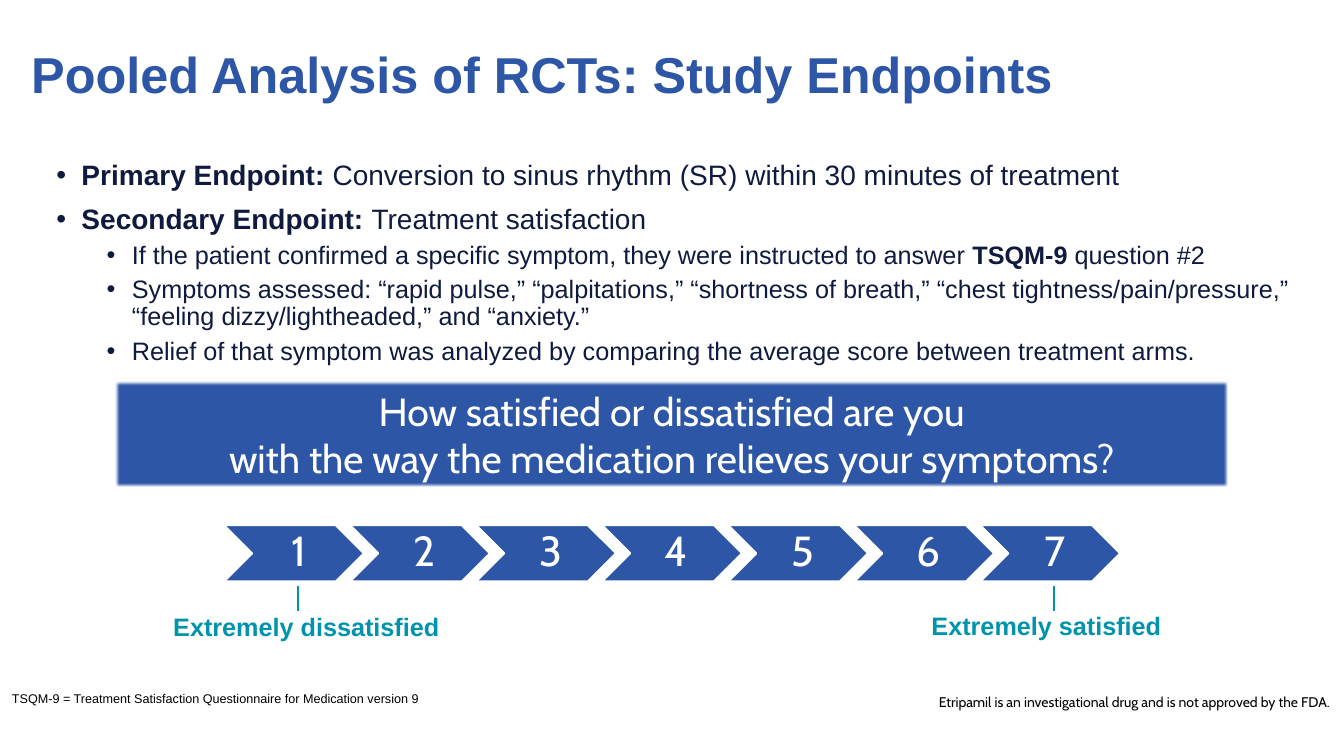
from dataclasses import dataclass
from typing import Any

from lxml.etree import SubElement
from pptx import Presentation
from pptx.dml.color import RGBColor
from pptx.enum.shapes import MSO_CONNECTOR, MSO_SHAPE
from pptx.enum.text import MSO_ANCHOR, PP_ALIGN
from pptx.oxml.ns import qn
from pptx.util import Inches, Pt

BLUE = RGBColor(0x2D, 0x56, 0xA6)
NAVY = RGBColor(0x0F, 0x1A, 0x3E)
TEAL = RGBColor(0x00, 0x93, 0xAC)
WHITE = RGBColor(0xFF, 0xFF, 0xFF)
BLACK = RGBColor(0x00, 0x00, 0x00)

TITLE_FONT = {"name": "Arial", "size": Pt(36), "bold": True}
QUESTION_FONT = {"name": "Cabin", "size": Pt(28), "bold": False}
SCORE_FONT = {"name": "Cabin", "size": Pt(30), "bold": False}
ANCHOR_FONT = {"name": "Arial", "size": Pt(18), "bold": True}
NOTE_FONT = {"name": "Arial", "size": Pt(9), "bold": False}
DISCLAIMER_FONT = {"name": "Cabin", "size": Pt(10), "bold": False}
SCORE_FRAME = {
    "vertical_anchor": MSO_ANCHOR.MIDDLE,
    "word_wrap": True,
    "margin_left": Inches(0.13),
    "margin_right": Inches(0.04),
    "margin_top": Inches(0.04),
    "margin_bottom": Inches(0.04),
}


@dataclass(frozen=True)
class Endpoint:
    """A bullet whose phrases alternate between plain and bold, plain first."""
    level: int
    phrases: tuple[str, ...]


@dataclass(frozen=True)
class ScaleEnd:
    caption: str
    left: float
    top: float
    width: float
    tick: float


@dataclass(frozen=True)
class LevelStyle:
    indent: float
    size: int
    space_before: int


LEVELS = (LevelStyle(0.25, 20, 10), LevelStyle(0.75, 18, 5))
ENDPOINTS = (
    Endpoint(0, ("", "Primary Endpoint: ",
                 "Conversion to sinus rhythm (SR) within 30 minutes of treatment")),
    Endpoint(0, ("", "Secondary Endpoint: ", "Treatment satisfaction")),
    Endpoint(1, ("If the patient confirmed a specific symptom, they were instructed to answer ",
                 "TSQM-9", " question #2")),
    Endpoint(1, ("Symptoms assessed: “rapid pulse,” “palpitations,” “shortness of breath,” "
                 "“chest tightness/pain/pressure,” “feeling dizzy/lightheaded,” and “anxiety.”",)),
    Endpoint(1, ("Relief of that symptom was analyzed by comparing the average score "
                 "between treatment arms.",)),
)
SCALE_ENDS = (
    ScaleEnd("Extremely dissatisfied", 1.62, 6.02, 3.06, 2.96),
    ScaleEnd("Extremely satisfied", 9.14, 6.01, 2.68, 10.45),
)
SCORES = range(1, 8)
SCORE_LEFT, SCORE_TOP, SCORE_PITCH = 2.22, 5.21, 1.25


def apply(target: Any, formats: dict[str, Any]) -> None:
    for attribute, value in formats.items():
        setattr(target, attribute, value)


def write(paragraph: Any, wording: str, font: dict[str, Any], color: RGBColor,
          align: PP_ALIGN = PP_ALIGN.LEFT) -> None:
    run = paragraph.add_run()
    run.text = wording
    paragraph.alignment = align
    apply(run.font, font)
    run.font.color.rgb = color


def add_text_frame(slide: Any, left: float, top: float, width: float, height: float) -> Any:
    frame = slide.shapes.add_textbox(
        Inches(left), Inches(top), Inches(width), Inches(height)).text_frame
    frame.word_wrap = True
    return frame


def add_filled(slide: Any, kind: MSO_SHAPE, left: float, top: float,
               width: float, height: float) -> Any:
    shape = slide.shapes.add_shape(
        kind, Inches(left), Inches(top), Inches(width), Inches(height))
    shape.shadow.inherit = False
    shape.fill.solid()
    shape.fill.fore_color.rgb = BLUE
    return shape


def add_title(slide: Any) -> None:
    title = slide.shapes.title
    apply(title, {"left": Inches(0.21), "top": Inches(0.04),
                  "width": Inches(11.5), "height": Inches(1.45)})
    title.text_frame.vertical_anchor = MSO_ANCHOR.MIDDLE
    heading = title.text_frame.paragraphs[0]
    heading.line_spacing = 0.9
    write(heading, "Pooled Analysis of RCTs: Study Endpoints", TITLE_FONT, BLUE)


def add_endpoints(slide: Any) -> None:
    frame = add_text_frame(slide, 0.46, 1.55, 12.52, 1.85)
    for index, endpoint in enumerate(ENDPOINTS):
        style = LEVELS[endpoint.level]
        bullet = frame.add_paragraph() if index else frame.paragraphs[0]
        properties = bullet._p.get_or_add_pPr()
        properties.set("marL", str(Inches(style.indent)))
        properties.set("indent", str(-Inches(0.25)))
        SubElement(properties, qn("a:buFont"), typeface="Arial")
        SubElement(properties, qn("a:buChar"), char="•")
        apply(bullet, {"level": endpoint.level, "line_spacing": 0.9,
                       "space_before": Pt(style.space_before if index else 0)})
        for position, phrase in enumerate(endpoint.phrases):
            if phrase:
                font = {"name": "Arial", "size": Pt(style.size), "bold": position % 2 == 1}
                write(bullet, phrase, font, NAVY)


def add_scores(slide: Any) -> None:
    for index, score in enumerate(SCORES):
        chevron = add_filled(slide, MSO_SHAPE.CHEVRON,
                             SCORE_LEFT + index * SCORE_PITCH, SCORE_TOP, 1.39, 0.56)
        chevron.line.color.rgb = WHITE
        chevron.line.width = Pt(1.5)
        apply(chevron.text_frame, SCORE_FRAME)
        digit = chevron.text_frame.paragraphs[0]
        digit.line_spacing = 0.9
        write(digit, str(score), SCORE_FONT, WHITE, PP_ALIGN.CENTER)


def add_scale_end(slide: Any, end: ScaleEnd) -> None:
    frame = add_text_frame(slide, end.left, end.top, end.width, 0.4)
    write(frame.paragraphs[0], end.caption, ANCHOR_FONT, TEAL)
    tick = slide.shapes.add_connector(
        MSO_CONNECTOR.STRAIGHT, Inches(end.tick), Inches(5.81), Inches(end.tick), Inches(6.06))
    tick.line.color.rgb = TEAL
    tick.line.width = Pt(1.5)
    SubElement(tick._element.spPr, qn("a:effectLst"))


def add_question(slide: Any) -> None:
    banner = add_filled(slide, MSO_SHAPE.RECTANGLE, 1.15, 3.79, 11.02, 1.04)
    banner.line.fill.background()
    # Slightly soft edges
    effects = banner._element.spPr.find(qn("a:effectLst"))
    SubElement(effects, qn("a:softEdge"), rad=str(Pt(1)))
    frame = banner.text_frame
    apply(frame, {"word_wrap": True, "vertical_anchor": MSO_ANCHOR.MIDDLE})
    write(frame.paragraphs[0], "How satisfied or dissatisfied are you",
          QUESTION_FONT, WHITE, PP_ALIGN.CENTER)
    write(frame.add_paragraph(), "with the way the medication relieves your symptoms?",
          QUESTION_FONT, WHITE, PP_ALIGN.CENTER)


def add_footers(slide: Any) -> None:
    disclaimer = add_text_frame(slide, 9.17, 6.83, 4.16, 0.27)
    write(disclaimer.paragraphs[0],
          "Etripamil is an investigational drug and is not approved by the FDA.",
          DISCLAIMER_FONT, BLACK, PP_ALIGN.CENTER)
    abbreviation = add_text_frame(slide, 0.02, 6.8, 8.09, 0.25)
    write(abbreviation.paragraphs[0],
          "TSQM-9 = Treatment Satisfaction Questionnaire for Medication version 9",
          NOTE_FONT, BLACK)


def main() -> None:
    deck = Presentation()
    deck.slide_width, deck.slide_height = Inches(13.33), Inches(7.5)
    slide = deck.slides.add_slide(deck.slide_layouts[5])
    add_title(slide)
    add_endpoints(slide)
    # Satisfaction question and its seven-point scale
    add_scores(slide)
    for end in SCALE_ENDS:
        add_scale_end(slide, end)
    add_question(slide)
    add_footers(slide)
    deck.save("out.pptx")


if __name__ == "__main__":
    main()
